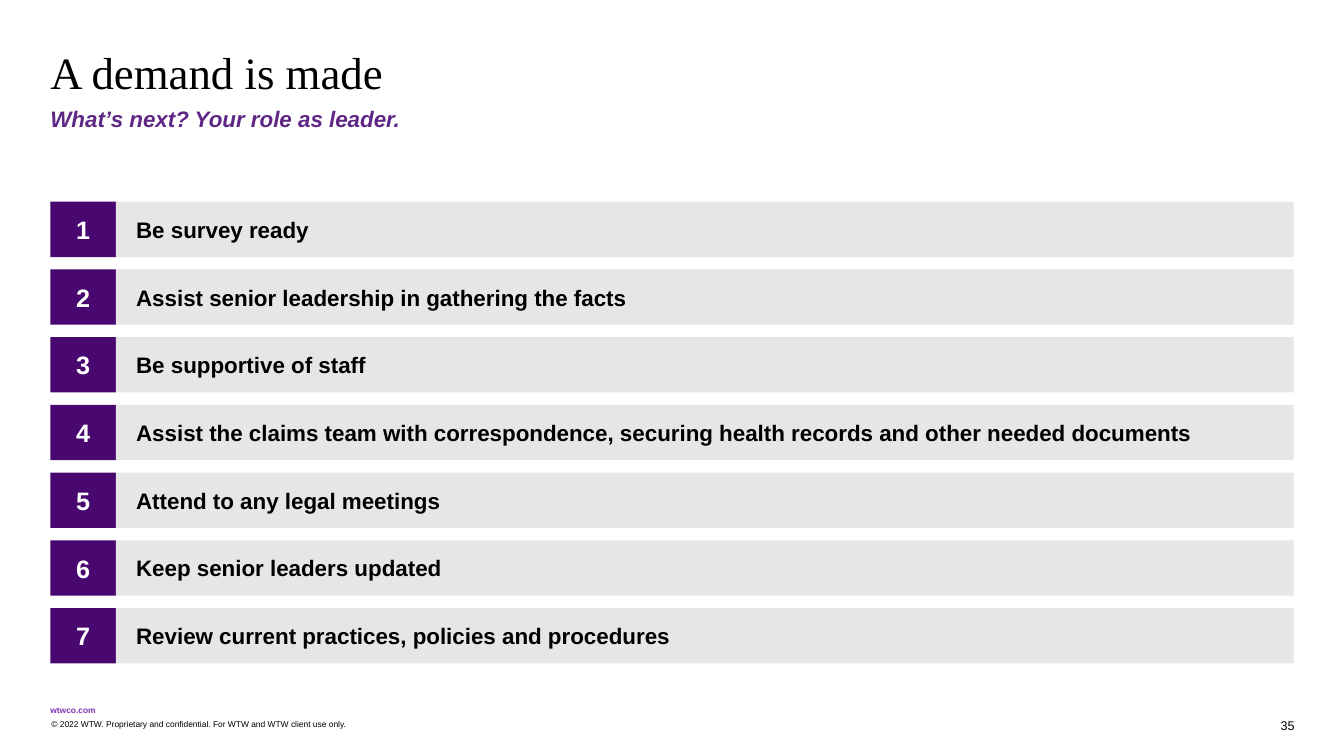
from lxml import etree
from pptx import Presentation
from pptx.dml.color import RGBColor
from pptx.enum.shapes import MSO_SHAPE
from pptx.enum.text import MSO_ANCHOR, MSO_AUTO_SIZE, PP_ALIGN
from pptx.oxml.ns import qn
from pptx.util import Inches, Pt

RECTANGLE = MSO_SHAPE.RECTANGLE
TOP, MIDDLE, BOTTOM = MSO_ANCHOR.TOP, MSO_ANCHOR.MIDDLE, MSO_ANCHOR.BOTTOM
LEFT, CENTER, RIGHT = PP_ALIGN.LEFT, PP_ALIGN.CENTER, PP_ALIGN.RIGHT
NO_AUTOFIT = MSO_AUTO_SIZE.NONE

BLACK = RGBColor(0x00, 0x00, 0x00)
WHITE = RGBColor(0xFF, 0xFF, 0xFF)
GREY = RGBColor(0xE6, 0xE6, 0xE6)
DEEP_PURPLE = RGBColor(0x48, 0x08, 0x6F)
SUBTITLE_PURPLE = RGBColor(0x5F, 0x27, 0x85)
LINK_PURPLE = RGBColor(0x7F, 0x35, 0xB2)

HEADING_FONT = "Times New Roman"
BODY_FONT = "Arial"

MARGIN = 0.5
ROW_TOP, ROW_HEIGHT, ROW_PITCH = 2, 0.55, 0.672
NUMBER_WIDTH, LABEL_WIDTH = 0.65, 11.68

STEPS = [
    "Be survey ready",
    "Assist senior leadership in gathering the facts",
    "Be supportive of staff",
    "Assist the claims team with correspondence, securing health records and other needed documents",
    "Attend to any legal meetings",
    "Keep senior leaders updated",
    "Review current practices, policies and procedures",
]


def write_text(shape, text, size=16, color=BLACK, font=BODY_FONT, bold=False, italic=False,
               align=LEFT, anchor=TOP, side_inset=0, line_spacing=1.0, wrap=True):
    frame = shape.text_frame
    frame.auto_size = NO_AUTOFIT
    frame.word_wrap = wrap
    frame.vertical_anchor = anchor
    frame.margin_left = frame.margin_right = Inches(side_inset)
    frame.margin_top = frame.margin_bottom = 0
    paragraph = frame.paragraphs[0]
    properties = paragraph._p.get_or_add_pPr()
    properties.set("marL", "0")
    properties.set("indent", "0")
    etree.SubElement(properties, qn("a:buNone"))
    paragraph.alignment = align
    paragraph.line_spacing = line_spacing
    paragraph.space_before = Pt(0)
    run = paragraph.add_run()
    run.text = text
    run.font.name = font
    run.font.size = Pt(size)
    run.font.bold = bold
    run.font.italic = italic
    run.font.color.rgb = color


class SlideBuilder:
    def __init__(self, presentation):
        self.slide = presentation.slides.add_slide(presentation.slide_layouts[1])

    def placeholder(self, index, text, left, top, width, height, **style):
        shape = self.slide.placeholders[index]
        shape.left, shape.top = Inches(left), Inches(top)
        shape.width, shape.height = Inches(width), Inches(height)
        write_text(shape, text, **style)

    def text(self, text, left, top, width, height, **style):
        shape = self.slide.shapes.add_textbox(
            Inches(left), Inches(top), Inches(width), Inches(height))
        write_text(shape, text, **style)

    def bar(self, text, left, top, width, fill, **style):
        shape = self.slide.shapes.add_shape(
            RECTANGLE, Inches(left), Inches(top), Inches(width), Inches(ROW_HEIGHT))
        shape.shadow.inherit = False
        shape.fill.solid()
        shape.fill.fore_color.rgb = fill
        shape.line.fill.background()
        write_text(shape, text, bold=True, anchor=MIDDLE, side_inset=0.2, **style)


def main():
    presentation = Presentation()
    presentation.slide_width = Inches(13.33)
    presentation.slide_height = Inches(7.5)
    builder = SlideBuilder(presentation)

    # Heading
    builder.placeholder(0, "A demand is made", MARGIN, 0.5, 12.3, 0.5,
                        size=32, font=HEADING_FONT, line_spacing=0.9)
    builder.placeholder(1, "What’s next? Your role as leader.", MARGIN, 1.04, 12.3, 0.4,
                        color=SUBTITLE_PURPLE, bold=True, italic=True)

    # Numbered steps
    for index, step in enumerate(STEPS):
        top = ROW_TOP + index * ROW_PITCH
        builder.bar(str(index + 1), MARGIN, top, NUMBER_WIDTH, DEEP_PURPLE,
                    size=18, color=WHITE, align=CENTER)
        builder.bar(step, MARGIN + NUMBER_WIDTH, top, LABEL_WIDTH, GREY)

    # Footer
    builder.text("wtwco.com", MARGIN, 7, 0.45, 0.1,
                 size=6, color=LINK_PURPLE, bold=True, wrap=False)
    builder.text("© 2022 WTW. Proprietary and confidential. For WTW and WTW client use only.",
                 MARGIN + 0.01, 7.13, 6.6, 0.1, size=6)
    builder.text("35", 12.5, 7.04, 0.34, 0.23, size=9, align=RIGHT, anchor=BOTTOM)

    presentation.save("out.pptx")


if __name__ == "__main__":
    main()
